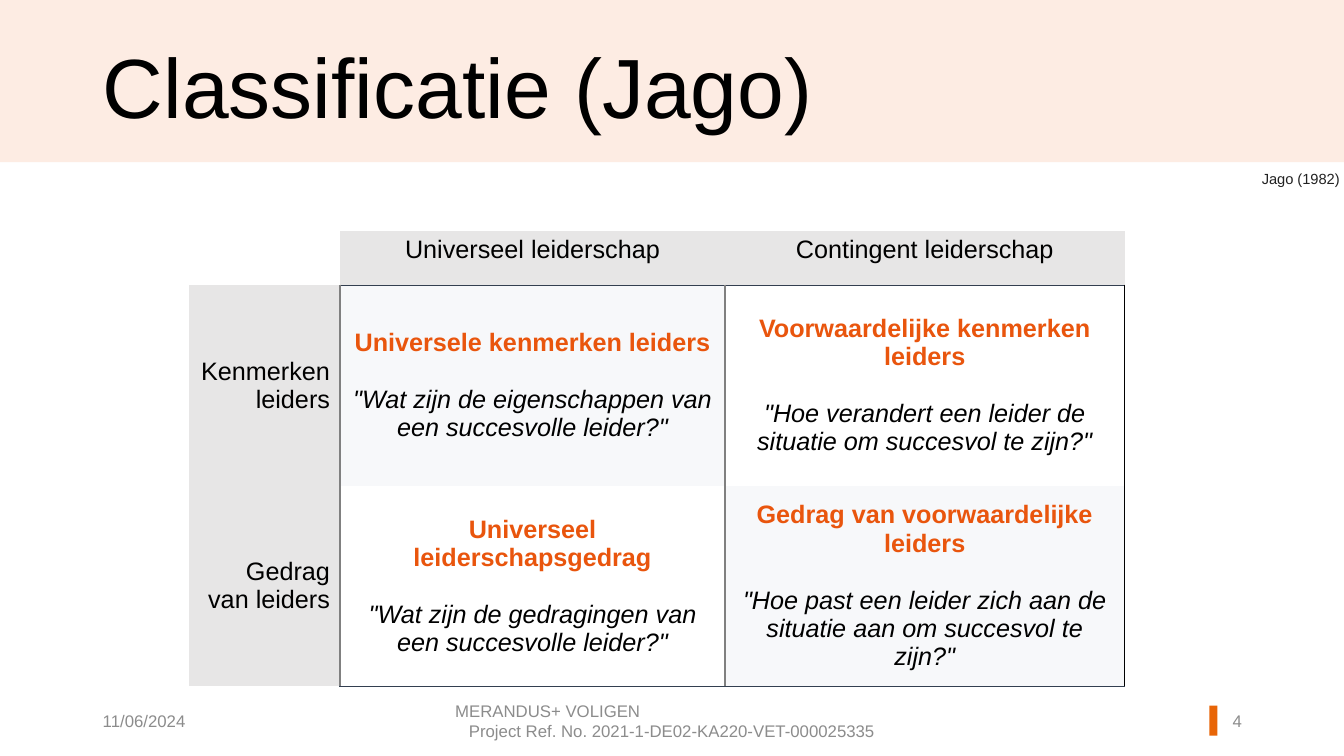
from dataclasses import dataclass

from lxml.etree import SubElement
from pptx import Presentation
from pptx.dml.color import RGBColor
from pptx.enum.shapes import MSO_SHAPE
from pptx.enum.text import MSO_ANCHOR, MSO_AUTO_SIZE, PP_ALIGN
from pptx.oxml.ns import qn
from pptx.util import Cm, Pt


@dataclass(frozen=True)
class Theme:
    font: str = "Arial"
    black: str = "000000"
    band: str = "FDECE3"
    accent: str = "E86507"
    heading: str = "E9550D"
    header: str = "E7E6E6"
    tint: str = "F7F8FA"
    white: str = "FFFFFF"
    muted: str = "8C8C8C"
    source: str = "222222"
    frame: str = "333F50"
    divider: str = "808080"
    title_size: float = 60
    table_size: float = 18
    footer_size: float = 12
    source_size: float = 10.5
    question_gap: float = 20.5
    no_style: str = "{2D5ABB26-0587-4C30-8999-92F81FD0307C}"


class SlideBuilder:
    def __init__(self, presentation, theme):
        self.theme = theme
        self.slide = presentation.slides.add_slide(presentation.slide_layouts[5])

    def style(self, paragraph, size, color, align=PP_ALIGN.LEFT, bold=False, italic=False):
        paragraph.alignment = align
        font = paragraph.font
        font.name = self.theme.font
        font.size = Pt(size)
        font.bold = bold
        font.italic = italic
        font.color.rgb = RGBColor.from_string(color)

    def title(self, text, left, top, width, height):
        title = self.slide.shapes.title
        title.left, title.top, title.width, title.height = left, top, width, height
        frame = title.text_frame
        frame.text = text
        frame.auto_size = MSO_AUTO_SIZE.NONE
        frame.vertical_anchor = MSO_ANCHOR.TOP
        paragraph = frame.paragraphs[0]
        paragraph.line_spacing = 0.9
        self.style(paragraph, self.theme.title_size, self.theme.black)

    def rectangle(self, left, top, width, height, color):
        shape = self.slide.shapes.add_shape(MSO_SHAPE.RECTANGLE, left, top, width, height)
        shape.shadow.inherit = False
        shape.fill.solid()
        shape.fill.fore_color.rgb = RGBColor.from_string(color)
        shape.line.fill.background()
        return shape

    def background_band(self, width, height):
        band = self.rectangle(0, 0, width, height, self.theme.band)
        self.slide.shapes._spTree.insert(2, band._element)

    def text(self, lines, left, top, width, height, size, color, anchor=MSO_ANCHOR.MIDDLE):
        frame = self.slide.shapes.add_textbox(left, top, width, height).text_frame
        frame.word_wrap = True
        frame.vertical_anchor = anchor
        frame.text = "\n".join(text for text, _ in lines)
        for paragraph, (_, align) in zip(frame.paragraphs, lines):
            self.style(paragraph, size, color, align)
        return frame

    def table(self, left, top, column_widths, row_heights):
        graphic = self.slide.shapes.add_table(
            len(row_heights), len(column_widths), left, top,
            sum(column_widths), sum(row_heights))
        table = graphic.table
        table.first_row = table.horz_banding = False
        table._tbl.tblPr.find(qn("a:tableStyleId")).text = self.theme.no_style
        for column, width in zip(table.columns, column_widths):
            column.width = width
        for row, height in zip(table.rows, row_heights):
            row.height = height
        return table

    def label_cell(self, cell, text, align, anchor):
        cell.text = text
        cell.vertical_anchor = anchor
        self.style(cell.text_frame.paragraphs[0], self.theme.table_size, self.theme.black, align)
        self.fill_cell(cell, self.theme.header)

    def theory_cell(self, cell, heading, question, color):
        cell.text = f"{heading}\n{question}"
        cell.vertical_anchor = MSO_ANCHOR.MIDDLE
        first, second = cell.text_frame.paragraphs
        size = self.theme.table_size
        self.style(first, size, self.theme.heading, PP_ALIGN.CENTER, bold=True)
        self.style(second, size, self.theme.black, PP_ALIGN.CENTER, italic=True)
        second.space_before = Pt(self.theme.question_gap)
        self.fill_cell(cell, color)

    def fill_cell(self, cell, color):
        cell.fill.solid()
        cell.fill.fore_color.rgb = RGBColor.from_string(color)

    def cell_borders(self, cell, **colors):
        properties = cell._tc.get_or_add_tcPr()
        for position, side in enumerate(("L", "R", "T", "B")):
            color = colors.get(side)
            line = SubElement(properties, qn(f"a:ln{side}"), w=str(Pt(1)))
            if color:
                fill = SubElement(line, qn("a:solidFill"))
                SubElement(fill, qn("a:srgbClr"), val=color)
            else:
                SubElement(line, qn("a:noFill"))
            properties.insert(position, line)


def main():
    theme = Theme()
    presentation = Presentation()
    presentation.slide_width = Cm(33.87)
    presentation.slide_height = Cm(19.05)
    builder = SlideBuilder(presentation, theme)

    builder.background_band(presentation.slide_width, Cm(4.09))
    builder.title("Classificatie (Jago)", Cm(2.34), Cm(1.04), Cm(25.22), Cm(2.16))
    source = builder.text([("Jago (1982)", PP_ALIGN.LEFT)], Cm(31.55), Cm(4.15), Cm(2.32), Cm(0.71),
                          theme.source_size, theme.source, MSO_ANCHOR.TOP)
    source.margin_right = 0

    table = builder.table(Cm(4.77), Cm(5.82), [Cm(3.8), Cm(9.7), Cm(10.07)],
                          [Cm(1.37), Cm(5.05), Cm(5.05)])
    column_labels = ["Universeel leiderschap", "Contingent leiderschap"]
    row_labels = ["Kenmerken leiders", "Gedrag van leiders"]
    theories = [
        [("Universele kenmerken leiders",
          '"Wat zijn de eigenschappen van een succesvolle leider?"'),
         ("Voorwaardelijke kenmerken leiders",
          '"Hoe verandert een leider de situatie om succesvol te zijn?"')],
        [("Universeel leiderschapsgedrag",
          '"Wat zijn de gedragingen van een succesvolle leider?"'),
         ("Gedrag van voorwaardelijke leiders",
          '"Hoe past een leider zich aan de situatie aan om succesvol te zijn?"')],
    ]
    for column, label in enumerate(column_labels, 1):
        cell = table.cell(0, column)
        builder.label_cell(cell, label, PP_ALIGN.CENTER, MSO_ANCHOR.TOP)
        builder.cell_borders(cell, B=theme.frame)
    for row, label in enumerate(row_labels, 1):
        cell = table.cell(row, 0)
        builder.label_cell(cell, label, PP_ALIGN.RIGHT, MSO_ANCHOR.MIDDLE)
        builder.cell_borders(cell, R=theme.divider)
        for column, (heading, question) in enumerate(theories[row - 1], 1):
            cell = table.cell(row, column)
            color = theme.tint if row == column else theme.white
            builder.theory_cell(cell, heading, question, color)
            borders = {"L": theme.divider, "R": theme.divider if column == 1 else theme.black}
            borders["T" if row == 1 else "B"] = theme.frame
            builder.cell_borders(cell, **borders)

    footers = [
        ([("11/06/2024", PP_ALIGN.LEFT)], 2.34, 7.62),
        ([("MERANDUS+ VOLIGEN", PP_ALIGN.LEFT),
          ("Project Ref. No. 2021-1-DE02-KA220-VET-000025335", PP_ALIGN.CENTER)], 11.22, 11.43),
        ([("4", PP_ALIGN.RIGHT)], 29.9, 1.65),
    ]
    for lines, left, width in footers:
        builder.text(lines, Cm(left), Cm(17.65), Cm(width), Cm(1.02),
                     theme.footer_size, theme.muted)
    builder.rectangle(Cm(30.48), Cm(17.78), Cm(0.2), Cm(0.76), theme.accent)

    presentation.save("out.pptx")


if __name__ == "__main__":
    main()
